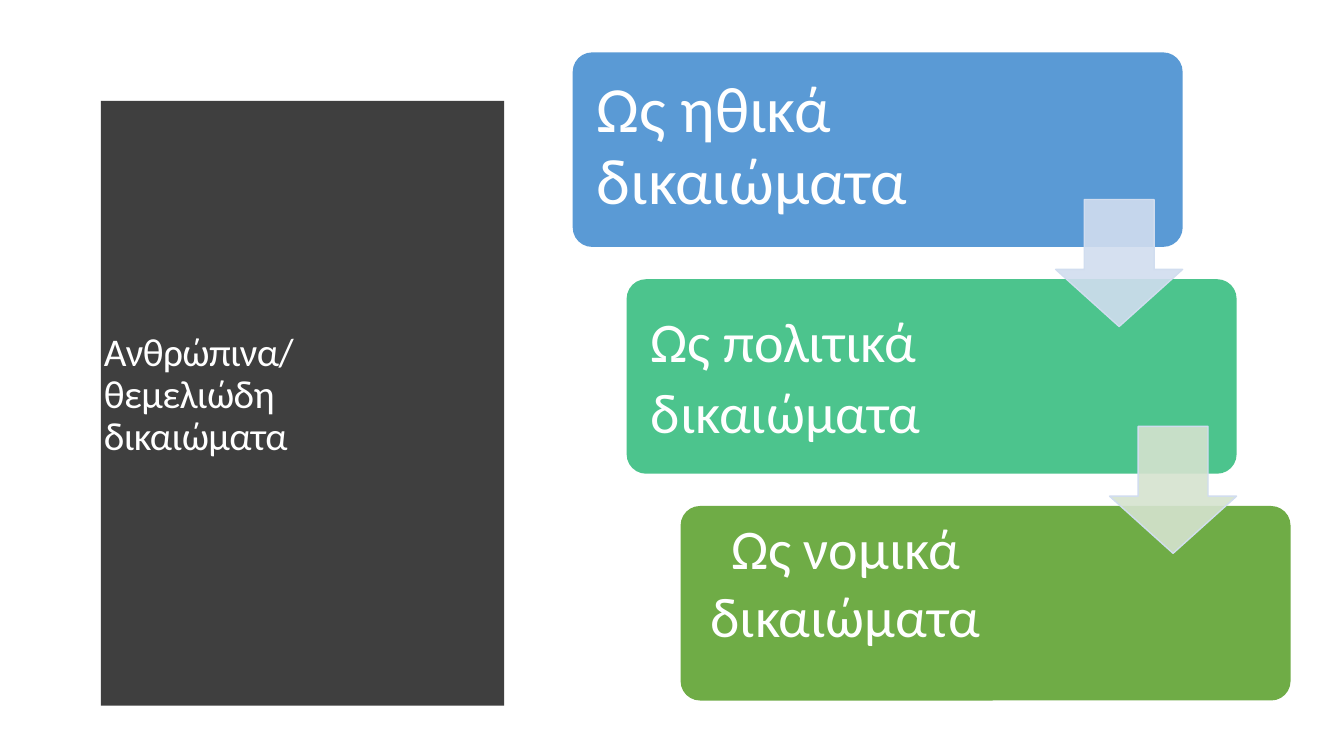
from lxml import etree
from pptx import Presentation
from pptx.dml.color import RGBColor as RGB
from pptx.enum.shapes import MSO_SHAPE as Shape
from pptx.enum.text import PP_ALIGN as Align
from pptx.oxml.ns import qn
from pptx.util import Inches, Pt

COLORS = {
    "panel": "3F3F3F", "text": "FFFFFF", "edge": "D1DDEF",
    "moral": "5A9AD5", "civic": "4CC48D", "legal": "6FAC46",
    "arrow1": "D1DDEF", "arrow2": "D5E3CF",
}
FONT = "Calibri"
BULGE = 0.24
STEP_X, STEP_Y = 0.535, 2.25
ARROW = 1.26


def rgb(name):
    return RGB.from_string(COLORS[name])


def paint(shape, name):
    shape.shadow.inherit = False
    shape.fill.solid()
    shape.fill.fore_color.rgb = rgb(name)
    shape.line.fill.background()


def add_text(slide, box, text, size, top, left=0, right=0, lead=None,
             align=Align.LEFT):
    frame = slide.shapes.add_textbox(*map(Inches, box)).text_frame
    frame.word_wrap = True
    frame.margin_left, frame.margin_right = Inches(left), Inches(right)
    frame.margin_top, frame.margin_bottom = Inches(top), 0
    para = frame.paragraphs[0]
    para.text = text
    para.alignment = align
    if lead:
        para.line_spacing = Pt(lead)
    para.font.name, para.font.size = FONT, Pt(size)
    para.font.color.rgb = rgb("text")
    return para


def add_panel(slide, x, y, w, h):
    """Dark panel whose right side bows outward as a parabola."""
    count = 40
    curve = []
    for i in range(count + 1):
        t = 2 * i / count - 1
        curve.append((x + w - BULGE * t * t, y + h * i / count))
    points = [(x, y), *curve, (x, y + h)]
    build = slide.shapes.build_freeform(*points[0], scale=Inches(1))
    build.add_line_segments(points[1:], close=True)
    paint(build.convert_to_shape(), "panel")
    para = add_text(slide, (x + 0.5, y + 2.71, 3.29, 0.91),
                    "Ανθρώπινα/θεμελιώδη δικαιώματα", 28, 0.07, lead=30)
    para.runs[0].font._element.set("spc", "-40")


def add_card(slide, x, y, w, h, color):
    card = slide.shapes.add_shape(Shape.ROUNDED_RECTANGLE,
                                  *map(Inches, (x, y, w, h)))
    card.adjustments[0] = 0.1
    paint(card, color)


def add_arrow(slide, x, y, color):
    arrow = slide.shapes.add_shape(Shape.DOWN_ARROW,
                                   *map(Inches, (x, y, ARROW, ARROW)))
    arrow.adjustments[0] = 0.55
    arrow.adjustments[1] = 0.45
    paint(arrow, color)
    fill = arrow.fill._xPr.find(qn("a:solidFill"))
    etree.SubElement(fill[0], qn("a:alpha")).set("val", "90000")
    arrow.line.color.rgb = rgb("edge")
    arrow.line.width = Pt(1)


def add_stairs(slide, x, y, w, h):
    """Three stepped cards with their texts, joined by two arrows."""
    spots = [(x + i * STEP_X, y + i * STEP_Y) for i in range(3)]
    for (left, top), color in zip(spots, ("moral", "civic", "legal")):
        add_card(slide, left, top, w, h, color)
    for (left, top), color in zip(spots, ("arrow1", "arrow2")):
        add_arrow(slide, left + w - ARROW, top + 1.46, color)

    (x1, y1), (x2, y2), (x3, y3) = spots
    add_text(slide, (x1 + 0.24, y1 + 0.13, 4.84, 1.52),
             "Ως ηθικά δικαιώματα", 46, 0.09, lead=50.9)
    add_text(slide, (x2 + 0.24, y2 + 0.14, 5.05, 1.6),
             "Ως πολιτικά δικαιώματα", 40, 0.09, lead=50.9)
    add_text(slide, (x3 - 0.54, y3 + 0.03, 3.82, 1.45),
             "Ως νομικά δικαιώματα", 40, 0.05, left=0.63, right=0.1,
             align=Align.CENTER)


def main():
    deck = Presentation()
    deck.slide_width, deck.slide_height = Inches(13.33), Inches(7.5)
    slide = deck.slides.add_slide(deck.slide_layouts[6])
    add_panel(slide, 0.53, 0.52, 4.79, 6.44)
    add_stairs(slide, 5.68, 0.52, 6.05, 1.93)
    deck.save("out.pptx")


if __name__ == "__main__":
    main()
